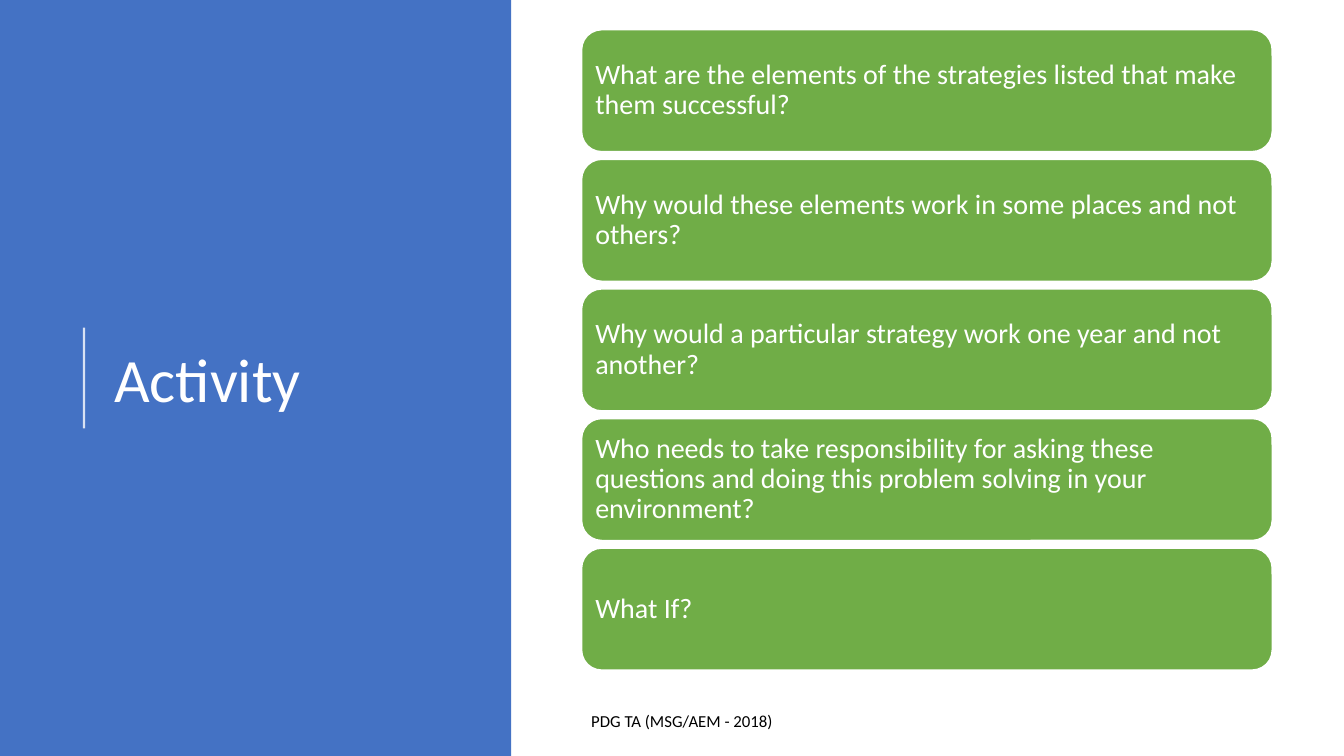
from dataclasses import dataclass

from lxml import etree
from pptx import Presentation
from pptx import util as u
from pptx.dml.color import RGBColor
from pptx.enum import shapes, text
from pptx.oxml import ns

COLORS = {"panel": "4472C4", "card": "70AD47", "light": "FFFFFF", "dark": "000000"}
FONT = "Calibri"
COLUMNS, ROWS = 160, 90
SLIDE_WIDTH, SLIDE_HEIGHT = u.Inches(13.33), u.Inches(7.5)

QUESTIONS = (
    "What are the elements of the strategies listed that make them successful?",
    "Why would these elements work in some places and not others?",
    "Why would a particular strategy work one year and not another?",
    "Who needs to take responsibility for asking these questions "
    "and doing this problem solving in your environment?",
    "What If?",
)
CARD_LEFT, CARD_TOP, CARD_WIDTH, CARD_HEIGHT = 69.2, 3.5, 82.3, 14.6
CARD_PITCH = 15.43


@dataclass(frozen=True)
class Area:
    """A rectangle in grid columns and rows."""
    column: float
    row: float
    width: float
    height: float

    def lengths(self) -> tuple[int, int, int, int]:
        return across(self.column), down(self.row), across(self.width), down(self.height)


@dataclass(frozen=True)
class Card:
    area: Area
    question: str


def across(columns: float) -> int:
    return round(SLIDE_WIDTH * columns / COLUMNS)


def down(rows: float) -> int:
    return round(SLIDE_HEIGHT * rows / ROWS)


def rgb(name: str) -> RGBColor:
    return RGBColor.from_string(COLORS[name])


def write(frame, words: str, size: float, color: str, spacing: float = 1.0) -> None:
    frame.word_wrap = True
    frame.auto_size = text.MSO_AUTO_SIZE.NONE
    frame.vertical_anchor = text.MSO_ANCHOR.MIDDLE
    paragraph = frame.paragraphs[0]
    paragraph.alignment = text.PP_ALIGN.LEFT
    paragraph.line_spacing = spacing
    run = paragraph.add_run()
    run.text = words
    run.font.name = FONT
    run.font.size = u.Pt(size)
    run.font.color.rgb = rgb(color)


def add_block(slide, kind, area: Area, fill: str):
    block = slide.shapes.add_shape(kind, *area.lengths())
    block.shadow.inherit = False
    block.fill.solid()
    block.fill.fore_color.rgb = rgb(fill)
    block.line.fill.background()
    return block


def add_card(slide, card: Card) -> None:
    block = add_block(slide, shapes.MSO_SHAPE.ROUNDED_RECTANGLE, card.area, "card")
    block.line.color.rgb = rgb("light")
    block.line.width = u.Pt(1.5)
    frame = block.text_frame
    frame.margin_left = frame.margin_right = u.Inches(0.08)
    frame.margin_top = frame.margin_bottom = u.Inches(0.08)
    write(frame, card.question, 20, "light", 0.9)


def add_title_rule(slide) -> None:
    rule = slide.shapes.add_connector(
        shapes.MSO_CONNECTOR.STRAIGHT, across(10), down(51), across(10), down(39))
    rule.line.color.rgb = rgb("light")
    rule.line.width = u.Pt(1.5)
    properties = rule.element.spPr
    color = properties.find(".//" + ns.qn("a:srgbClr"))
    etree.SubElement(color, ns.qn("a:alpha"), val="80000")
    etree.SubElement(properties, ns.qn("a:effectLst"))


def add_title(slide) -> None:
    title = slide.shapes.title
    title.left, title.top, title.width, title.height = Area(12.4, 9.4, 44.3, 72.2).lengths()
    write(title.text_frame, "Activity", 44, "light", 0.9)


def main() -> None:
    presentation = Presentation()
    presentation.slide_width, presentation.slide_height = SLIDE_WIDTH, SLIDE_HEIGHT
    slide = presentation.slides.add_slide(presentation.slide_layouts.get_by_name("Title Only"))

    panel = add_block(slide, shapes.MSO_SHAPE.RECTANGLE, Area(0, 0, 60.85, ROWS), "panel")
    slide.shapes.title.element.addprevious(panel.element)
    add_title_rule(slide)
    add_title(slide)

    for index, question in enumerate(QUESTIONS):
        area = Area(CARD_LEFT, CARD_TOP + index * CARD_PITCH, CARD_WIDTH, CARD_HEIGHT)
        add_card(slide, Card(area, question))

    footer = slide.shapes.add_textbox(*Area(CARD_LEFT, 83.4, 37.7, 4.8).lengths())
    write(footer.text_frame, "PDG TA (MSG/AEM - 2018)", 12, "dark")
    presentation.save("out.pptx")


if __name__ == "__main__":
    main()
